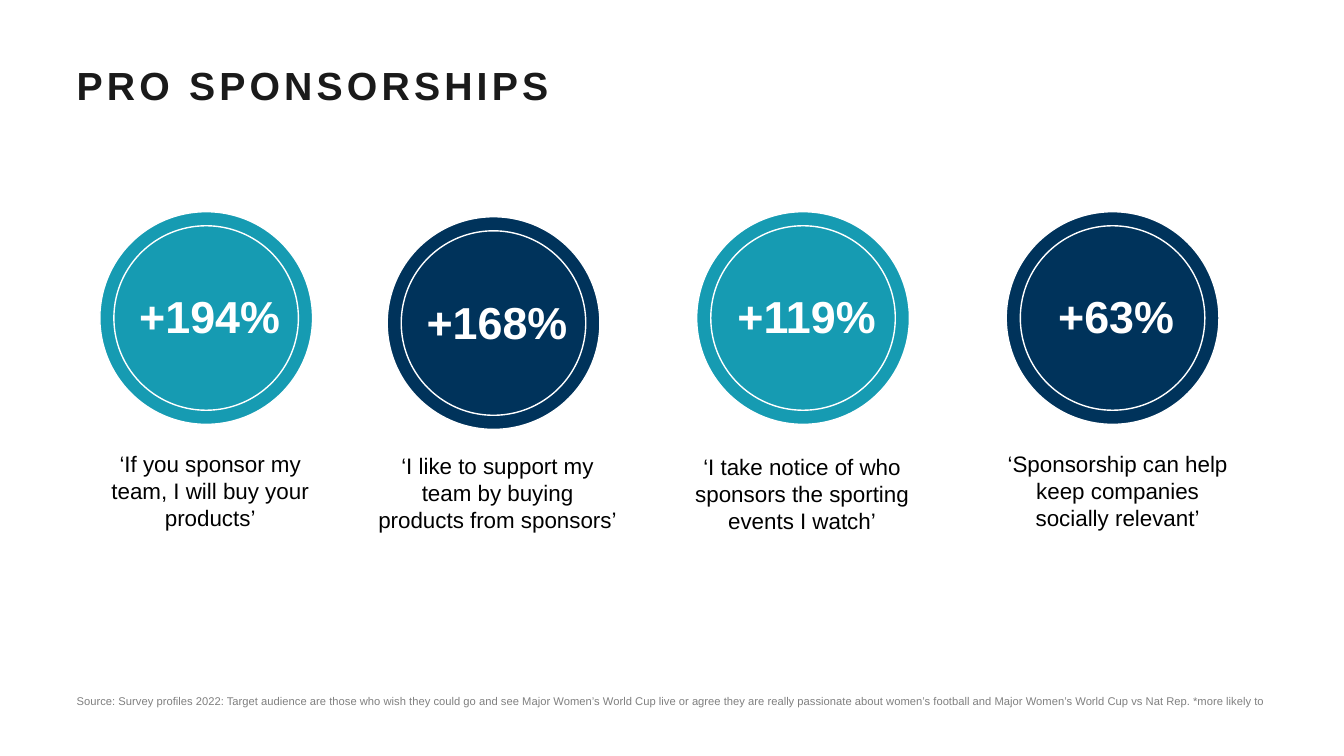
"""Build the Pro Sponsorships slide with four statistic badges."""
from dataclasses import dataclass

from pptx import Presentation
from pptx.dml.color import RGBColor
from pptx.enum.shapes import MSO_SHAPE
from pptx.enum.text import MSO_ANCHOR, PP_ALIGN
from pptx.shapes.autoshape import Shape
from pptx.shapes.shapetree import GroupShapes, SlideShapes
from pptx.util import Inches, Pt

COLORS = {
    "teal": "169BB2",
    "navy": "00335B",
    "white": "FFFFFF",
    "title": "1A1A1A",
    "caption": "000000",
    "source": "808080",
}
DISC_SIZE = 2.11
RING_INSET = 0.14
SOURCE_TEXT = (
    "Source: Survey profiles 2022: Target audience are those who wish they could go "
    "and see Major Women’s World Cup live or agree they are really passionate about "
    "women’s football and Major Women’s World Cup vs Nat Rep. *more likely to"
)


@dataclass(frozen=True)
class Badge:
    left: float
    top: float
    color: str
    value: str
    caption: str
    caption_left: float
    caption_top: float
    caption_height: float = 0.91


@dataclass(frozen=True)
class TextStyle:
    size: float
    color: str
    bold: bool = False
    alignment: PP_ALIGN = PP_ALIGN.CENTER
    line_spacing: float = 1.0
    margin: float | None = None


TITLE = TextStyle(28, "title", True, PP_ALIGN.LEFT, 0.85, 0)
VALUE = TextStyle(32, "white", True)
CAPTION = TextStyle(16, "caption")
SOURCE = TextStyle(8, "source", False, PP_ALIGN.LEFT, 0.9, 0)

BADGES = [
    Badge(0.99, 2.1, "teal", "+194%",
          "‘If you sponsor my team, I will buy your products’", 0.8, 4.42),
    Badge(3.84, 2.15, "navy", "+168%",
          "‘I like to support my team by buying products from sponsors’", 3.65, 4.44, 1.18),
    Badge(6.91, 2.1, "teal", "+119%",
          "‘I take notice of who sponsors the sporting events I watch’", 6.67, 4.45),
    Badge(9.98, 2.1, "navy", "+63%",
          "‘Sponsorship can help keep companies socially relevant’", 9.8, 4.42),
]


def color(name: str) -> RGBColor:
    return RGBColor.from_string(COLORS[name])


def add_text(shapes: SlideShapes | GroupShapes, text: str, left: float, top: float,
             width: float, height: float, style: TextStyle) -> Shape:
    shape = shapes.add_textbox(Inches(left), Inches(top), Inches(width), Inches(height))
    frame = shape.text_frame
    frame.word_wrap = True
    frame.vertical_anchor = MSO_ANCHOR.TOP
    if style.margin is not None:
        frame.margin_left = frame.margin_right = Inches(style.margin)
        frame.margin_top = frame.margin_bottom = Inches(style.margin)
    paragraph = frame.paragraphs[0]
    paragraph.text = text
    paragraph.alignment = style.alignment
    paragraph.line_spacing = style.line_spacing
    paragraph.font.name = "Arial"
    paragraph.font.size = Pt(style.size)
    paragraph.font.bold = style.bold
    paragraph.font.color.rgb = color(style.color)
    return shape


def add_circle(shapes: GroupShapes, left: float, top: float, size: float,
               fill: str | None) -> None:
    shape = shapes.add_shape(MSO_SHAPE.OVAL, Inches(left), Inches(top),
                             Inches(size), Inches(size))
    shape.shadow.inherit = False
    if fill:
        shape.fill.solid()
        shape.fill.fore_color.rgb = color(fill)
    else:
        shape.fill.background()
    shape.line.color.rgb = color("white")
    shape.line.width = Pt(1)


def add_badge(shapes: SlideShapes, badge: Badge) -> None:
    group = shapes.add_group_shape().shapes
    add_circle(group, badge.left, badge.top, DISC_SIZE, badge.color)
    add_circle(group, badge.left + RING_INSET, badge.top + RING_INSET,
               DISC_SIZE - 2 * RING_INSET, None)
    add_text(group, badge.value, badge.left + 0.11, badge.top + 0.72, 1.96, 0.64, VALUE)
    add_text(shapes, badge.caption, badge.caption_left, badge.caption_top,
             2.57, badge.caption_height, CAPTION)


def main() -> None:
    presentation = Presentation()
    presentation.slide_width = Inches(13.33)
    presentation.slide_height = Inches(7.5)
    slide = presentation.slides.add_slide(presentation.slide_layouts[6])
    title = add_text(slide.shapes, "PRO SPONSORSHIPS", 0.76, 0.68, 5.71, 1.1, TITLE)
    title_run = title.text_frame.paragraphs[0].runs[0]
    title_run._r.get_or_add_rPr().set("spc", "300")
    for badge in BADGES:
        add_badge(slide.shapes, badge)
    add_text(slide.shapes, SOURCE_TEXT, 0.76, 6.9, 12.22, 0.17, SOURCE)
    presentation.save("out.pptx")


if __name__ == "__main__":
    main()
